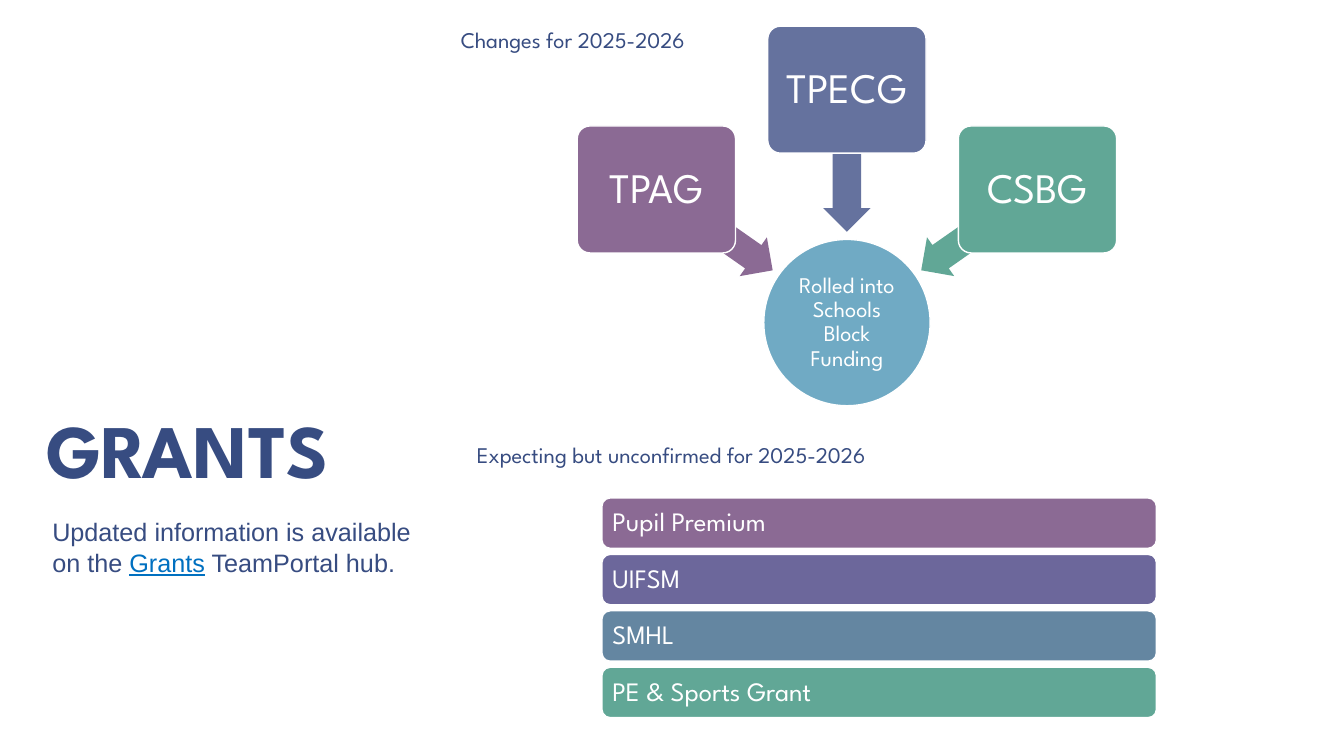
from pptx import Presentation
from pptx.dml.color import RGBColor
from pptx.enum import shapes, text
from pptx.oxml import parse_xml
from pptx.oxml.ns import nsdecls
from pptx.util import Inches, Pt

COLORS = {
    "navy": "374C81",
    "link": "0070C0",
    "white": "FFFFFF",
    "plum": "8B6A94",
    "indigo": "65729E",
    "violet": "6C679B",
    "steel": "6486A1",
    "green": "61A796",
    "sky": "70AAC4",
}
HEADING_FONT = "League Spartan"
HUB_X, HUB_Y, HUB_SIZE = 8.4, 3.2, 1.65
NODE_W, NODE_H = 1.57, 1.26
ARROW_W, ARROW_H = 1.4, 0.47
BAR_LEFT, BAR_TOP, BAR_W, BAR_H, BAR_PITCH = 5.97, 4.94, 5.5, 0.5, 0.56

# label, colour, node offset from hub, arrow offset from hub, arrow rotation
ROLLED_IN_GRANTS = [
    ("TPAG", "plum", (-1.89, -1.32), (-1.31, -0.92), 215),
    ("TPECG", "indigo", (0, -2.31), (0, -1.6), 270),
    ("CSBG", "green", (1.89, -1.32), (1.31, -0.92), 325),
]
EXPECTED_GRANTS = [
    ("Pupil Premium", "plum"),
    ("UIFSM", "violet"),
    ("SMHL", "steel"),
    ("PE & Sports Grant", "green"),
]


def color(name):
    return RGBColor.from_string(COLORS[name])


def place(shape, left, top, width, height):
    shape.left, shape.top = Inches(left), Inches(top)
    shape.width, shape.height = Inches(width), Inches(height)


def write(shape, parts, size, font=HEADING_FONT, fill="white", bold=False,
          align=text.PP_ALIGN.LEFT, anchor=text.MSO_ANCHOR.MIDDLE,
          spacing=0.9, inset=(0.1, 0.05), bullet=True):
    """Fill a shape with one paragraph; parts is a string or (string, is_link) pairs."""
    frame = shape.text_frame
    frame.word_wrap = True
    frame.auto_size = text.MSO_AUTO_SIZE.NONE
    frame.vertical_anchor = anchor
    frame.margin_left = frame.margin_right = Inches(inset[0])
    frame.margin_top = frame.margin_bottom = Inches(inset[1])
    paragraph = frame.paragraphs[0]
    if not bullet:
        properties = paragraph._p.get_or_add_pPr()
        properties.set("marL", "0")
        properties.set("indent", "0")
        properties.append(parse_xml(f"<a:buNone {nsdecls('a')}/>"))
    paragraph.alignment = align
    paragraph.line_spacing = spacing
    paragraph.space_before = Pt(0)
    for wording, is_link in [(parts, False)] if isinstance(parts, str) else parts:
        run = paragraph.add_run()
        run.text = wording
        run.font.name = font
        run.font.size = Pt(size)
        run.font.bold = bold
        run.font.underline = is_link
        run.font.color.rgb = color("link" if is_link else fill)


def add_text(slide, box, parts, size, **style):
    write(slide.shapes.add_textbox(*map(Inches, box)), parts, size, **style)


def add_block(slide, kind, box, fill, outlined=True):
    block = slide.shapes.add_shape(kind, *map(Inches, box))
    block.shadow.inherit = False
    block.fill.solid()
    block.fill.fore_color.rgb = color(fill)
    if outlined:
        block.line.color.rgb = color("white")
        block.line.width = Pt(1)
    else:
        block.line.fill.background()
    return block


def around_hub(offset, width, height):
    return (HUB_X + offset[0] - width / 2, HUB_Y + offset[1] - height / 2, width, height)


def add_hub_diagram(slide):
    hub = add_block(slide, shapes.MSO_SHAPE.OVAL, around_hub((0, 0), HUB_SIZE, HUB_SIZE), "sky")
    write(hub, "Rolled into Schools Block Funding", 16,
          align=text.PP_ALIGN.CENTER, inset=(0.01, 0.01))
    for label, fill, node_offset, arrow_offset, rotation in ROLLED_IN_GRANTS:
        arrow = add_block(slide, shapes.MSO_SHAPE.LEFT_ARROW,
                          around_hub(arrow_offset, ARROW_W, ARROW_H), fill, outlined=False)
        arrow.adjustments[0] = 0.6
        arrow.adjustments[1] = 0.5
        arrow.rotation = rotation
        node = add_block(slide, shapes.MSO_SHAPE.ROUNDED_RECTANGLE,
                         around_hub(node_offset, NODE_W, NODE_H), fill)
        node.adjustments[0] = 0.1
        write(node, label, 30, align=text.PP_ALIGN.CENTER, inset=(0.06, 0.06))


def add_grant_bars(slide):
    for row, (label, fill) in enumerate(EXPECTED_GRANTS):
        bar = add_block(slide, shapes.MSO_SHAPE.ROUNDED_RECTANGLE,
                        (BAR_LEFT, BAR_TOP + row * BAR_PITCH, BAR_W, BAR_H), fill)
        write(bar, label, 19, inset=(0.08, 0.08))


def main():
    deck = Presentation()
    deck.slide_width, deck.slide_height = Inches(13.33), Inches(7.5)
    slide = deck.slides.add_slide(deck.slide_layouts[1])

    title, changes = slide.placeholders
    place(title, 0.33, 1.86, 3.67, 3.11)
    write(title, "GRANTS", 54, fill="navy", bold=True, spacing=0.85,
          anchor=text.MSO_ANCHOR.BOTTOM, inset=(0.13, 0.07))
    place(changes, 4.44, 0.23, 2.88, 0.37)
    write(changes, "Changes for 2025-2026", 16, fill="navy", spacing=0.85,
          anchor=text.MSO_ANCHOR.TOP, inset=(0.13, 0.07), bullet=False)

    add_hub_diagram(slide)
    add_text(slide, (0.42, 5.07, 3.78, 0.71),
             [("Updated information is available on the ", False),
              ("Grants", True), (" TeamPortal hub.", False)],
             18, font="Arial", fill="navy", spacing=1.0)
    add_text(slide, (4.6, 4.33, 5.39, 0.37), "Expecting but unconfirmed for 2025-2026",
             16, fill="navy", spacing=0.95, anchor=text.MSO_ANCHOR.TOP, inset=(0.13, 0.07))
    add_grant_bars(slide)
    deck.save("out.pptx")


if __name__ == "__main__":
    main()
